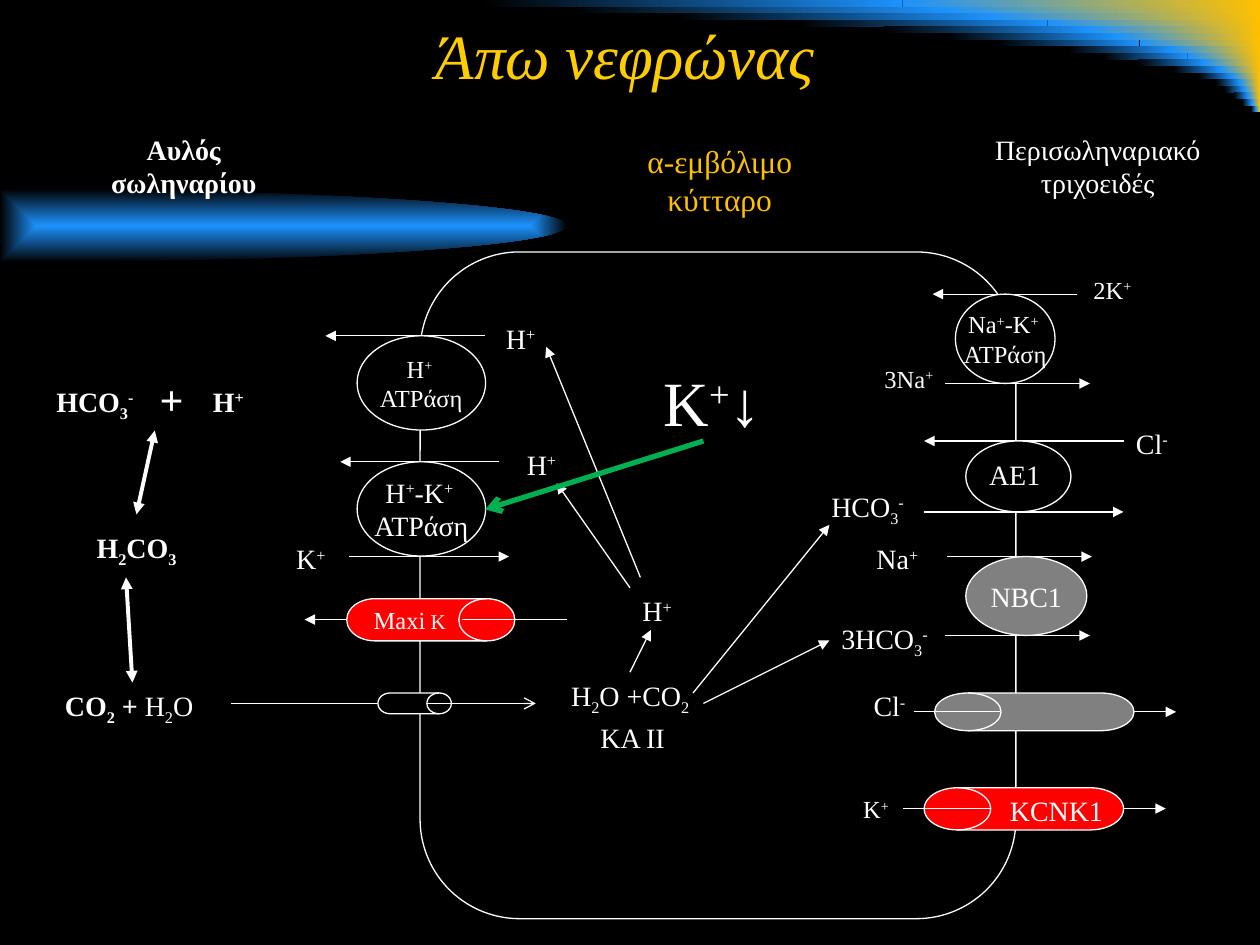
from math import cos, pi, sin
from lxml.etree import SubElement
from pptx import Presentation
from pptx.dml.color import RGBColor
from pptx.enum.shapes import MSO_CONNECTOR, MSO_SHAPE
from pptx.enum.text import MSO_ANCHOR, MSO_AUTO_SIZE, PP_ALIGN
from pptx.oxml.ns import qn
from pptx.util import Cm, Pt

WHITE = RGBColor(0xFF, 0xFF, 0xFF)
BLACK = RGBColor(0, 0, 0)
BLUE = RGBColor(0x1D, 0x92, 0xFD)
AMBER = RGBColor(0xFF, 0xC0, 0)
GOLD = RGBColor(0xFF, 0xCC, 0)
RED = RGBColor(0xFF, 0, 0)
GREY = RGBColor(0x80, 0x80, 0x80)
GREEN = RGBColor(0, 0xB0, 0x50)
LEFT, MID, RIGHT = PP_ALIGN.LEFT, PP_ALIGN.CENTER, PP_ALIGN.RIGHT


def write(frame, text, size=16, color=WHITE, bold=False, italic=False,
          align=LEFT, wrap=False):
    """Fill a frame; | parts runs, ^ raises, _ lowers, ~ ends bold."""
    frame.word_wrap = wrap
    for i, row in enumerate(text.split("\n")):
        para = frame.paragraphs[0] if i == 0 else frame.add_paragraph()
        para.alignment = align
        for part in row.split("|"):
            if part.startswith("~"):
                bold, part = False, part[1:]
            run = para.add_run()
            run.text = part.lstrip("^_")
            font = run.font
            font.name, font.size = "Times New Roman", Pt(size)
            font.bold, font.italic = bold, italic
            font.color.rgb = color
            if part[0] in "^_":
                shift = "30000" if part[0] == "^" else "-25000"
                run._r.get_or_add_rPr().set("baseline", shift)


def link(x1, y1, x2, y2, head=None, tail="triangle", color=WHITE, width=0.75):
    """Draw a line with arrowheads at its start (head) and end (tail)."""
    line = slide.shapes.add_connector(
        MSO_CONNECTOR.STRAIGHT, Cm(x1), Cm(y1), Cm(x2), Cm(y2))
    line.line.color.rgb = color
    line.line.width = Pt(width)
    ln = line.line._get_or_add_ln()
    for tag, kind in (("a:headEnd", head), ("a:tailEnd", tail)):
        if kind:
            SubElement(ln, qn(tag)).set("type", kind)
    SubElement(line._element.spPr, qn("a:effectLst"))


deck = Presentation()
deck.slide_width, deck.slide_height = Cm(25.4), Cm(19.05)
slide = deck.slides.add_slide(deck.slide_layouts[5])
slide.background.fill.solid()
slide.background.fill.fore_color.rgb = BLACK
shapes = slide.shapes

# Corner rays: each row fades black to blue, then blue to amber
starts = [9.73, 11.51, 13.61, 16.08, 17.83, 19.08, 20.12, 21.54, 22.22,
          22.94, 23.65, 24.16, 24.51, 24.69, 24.87, 25.04, 25.22]
for row, start in enumerate(starts):
    turn = start + 0.54 * (25.4 - start)
    for x, end, tones in ((turn, 25.4, (BLUE, AMBER)),
                          (start, turn, (BLACK, BLUE))):
        ray = shapes.add_shape(MSO_SHAPE.RECTANGLE, Cm(x), Cm(row * 0.133),
                               Cm(end - x), Cm(0.14))
        ray.shadow.inherit = False
        ray.line.fill.background()
        ray.fill.gradient()
        ray.fill.gradient_angle = 0
        for stop, tone in zip(ray.fill.gradient_stops, tones):
            stop.color.rgb = tone

# Half-ellipse beam on the left
steps = 48
arc = [(Cm(11.43 * cos(a)), Cm(4.55 + 0.74 * sin(a)))
       for a in (pi * (i / steps - 0.5) for i in range(steps + 1))]
form = shapes.build_freeform(*arc[0])
form.add_line_segments(arc[1:])
beam = form.convert_to_shape()
beam.shadow.inherit = False
beam.line.fill.background()
beam.fill.gradient()
for stop, tone in zip(beam.fill.gradient_stops, (BLUE, BLACK)):
    stop.color.rgb = tone
grad = beam._element.spPr.find(qn("a:gradFill"))
grad.remove(grad.find(qn("a:lin")))
way = SubElement(grad, qn("a:path"))
way.set("path", "shape")
rect = SubElement(way, qn("a:fillToRect"))
for side in "ltrb":
    rect.set(side, "50000")

title = shapes.title
title.left, title.top = Cm(0.85), Cm(0.2)
title.width, title.height = Cm(23.5), Cm(1.8)
title.text_frame.vertical_anchor = MSO_ANCHOR.MIDDLE
write(title.text_frame, "Άπω νεφρώνας", size=36, color=GOLD, italic=True,
      align=MID, wrap=True)

cell = shapes.add_shape(MSO_SHAPE.ROUNDED_RECTANGLE, Cm(8.47), Cm(5.08),
                        Cm(12.01), Cm(13.44))
cell.adjustments[0] = 0.167
cell.shadow.inherit = False
cell.fill.background()
cell.line.color.rgb = WHITE
cell.line.width = Pt(0.75)

# Ion flows across the membranes: height, start, end
flows = [
    (5.93, 21.72, 18.8), (7.73, 19.05, 21.97), (8.89, 22.65, 18.63),
    (10.32, 18.63, 22.65), (11.22, 19.1, 22.01), (12.81, 19.05, 21.97),
    (14.35, 18.42, 23.71), (16.3, 18.2, 23.5), (6.77, 9.78, 6.56),
    (9.31, 10.06, 6.86), (11.22, 7.04, 10.26), (12.49, 11.43, 6.14),
]
for y, x1, x2 in flows:
    link(x1, y, x2, y)
link(4.66, 14.18, 10.8, 14.18, tail="arrow")

# Reactions inside the cell
for ends in [(13.97, 13.97, 16.72, 10.58), (12.7, 11.85, 11.22, 9.74),
             (12.91, 11.64, 11.01, 6.99), (12.7, 13.55, 13.12, 12.7),
             (14.18, 14.18, 16.72, 12.91)]:
    link(*ends)
for ends in [(3.12, 8.68, 2.75, 10.37), (2.54, 11.64, 2.67, 13.76)]:
    link(*ends, head="triangle", width=2.25)

# Pumps and channels
OVAL, DRUM = MSO_SHAPE.OVAL, MSO_SHAPE.FLOWCHART_DIRECT_ACCESS_STORAGE
parts = [
    (OVAL, 19.26, 5.93, 2.01, 1.8, BLACK, 0, "Na|^+|-K|^+ \nATPάση", 14),
    (OVAL, 19.47, 8.89, 2.12, 1.43, BLACK, 0, "", 16),
    (OVAL, 19.47, 11.22, 2.44, 1.59, GREY, 0, "NBC1", 16),
    (OVAL, 7.2, 6.77, 2.59, 1.9, BLACK, 0, "Η|^+ \nATPάση", 14),
    (OVAL, 7.2, 9.31, 2.59, 1.9, BLACK, 0, "Η|^+|-K|^+ \nATPάση", 16),
    (DRUM, 6.99, 12.07, 3.39, 0.85, RED, 0, "", 16),
    (DRUM, 7.62, 13.97, 1.48, 0.42, BLACK, 0, "", 16),
    (DRUM, 18.84, 13.97, 4.02, 0.76, GREY, 180, "", 16),
    (DRUM, 18.63, 15.88, 4.02, 0.85, RED, 180, "", 16),
]
for kind, x, y, w, h, tone, turn, text, size in parts:
    part = shapes.add_shape(kind, Cm(x), Cm(y), Cm(w), Cm(h))
    part.shadow.inherit = False
    part.rotation = turn
    part.fill.solid()
    part.fill.fore_color.rgb = tone
    part.line.color.rgb = WHITE
    part.line.width = Pt(0.75)
    if text:
        part.text_frame.vertical_anchor = MSO_ANCHOR.MIDDLE
        write(part.text_frame, text, size=size, align=MID)

# Flow seen through each channel mouth
for y, x1, x2 in [(12.49, 9.31, 10.44), (14.18, 8.61, 9.1),
                  (14.35, 18.84, 20.16), (16.3, 18.63, 19.96)]:
    link(x1, y, x2, y, tail=None)

head = dict(align=MID, wrap=True)
bold = dict(bold=True)
small = dict(size=14)
wide = dict(wrap=True)
labels = [
    ("Αυλός σωληναρίου", 1.7, 2.54, 4.01, 1.63, head | bold),
    ("α-εμβόλιμο κύτταρο", 12.07, 2.74, 4.88, 1.8,
     head | dict(size=18, color=AMBER)),
    ("Περισωληναριακό τριχοειδές", 19.69, 2.54, 4.88, 1.63, head),
    ("2K|^+", 21.79, 5.41, 1.32, 1.04, small),
    ("3Na|^+", 17.58, 7.21, 1.52, 1.04, small),
    ("Cl|^-", 22.65, 8.47, 1.17, 0.93, {}),
    ("ΑΕ1", 19.69, 9.1, 1.9, 0.93, wide),
    ("HCO|_3|^-", 16.51, 9.74, 2.03, 1.14, {}),
    ("Na|^+", 17.42, 10.8, 1.4, 0.93, {}),
    ("3HCO|_3|^-", 16.71, 12.4, 2.31, 0.93, {}),
    ("Cl|^-", 17.36, 13.76, 1.17, 0.93, {}),
    ("K|^+", 17.15, 15.88, 1.07, 1.04, small),
    ("KCNK1", 20.11, 15.88, 2.41, 0.93, wide),
    ("Η|^+", 9.95, 6.35, 1.37, 0.93, wide),
    ("Η|^+", 10.37, 8.89, 1.37, 0.93, wide),
    ("Κ|^+", 5.72, 10.8, 1.37, 0.93, wide),
    ("Maxi", 7.2, 12.07, 2.12, 0.85, head | small),
    ("Η|^+", 12.7, 11.85, 1.17, 0.93, {}),
    ("H|_2|O +CO|_2", 11.22, 13.55, 2.97, 0.93, head),
    ("ΚA II", 11.84, 14.4, 1.83, 0.93, dict(align=MID)),
    ("Κ|^+|↓", 13.13, 7.2, 2.97, 1.8, wide | dict(size=36)),
    ("HCO|_3|^-", 0.85, 7.62, 2.13, 0.93, bold | dict(align=MID)),
    ("+", 2.96, 7.41, 0.99, 1.27, bold | dict(size=24, align=RIGHT)),
    ("Η|^+", 4.02, 7.62, 1.17, 0.93, bold | dict(align=MID)),
    ("H|_2|CO|_3", 1.7, 10.58, 2.18, 0.93, bold),
    ("CO|_2| + |~H|_2|O", 1.06, 13.76, 3.15, 0.93, bold),
]
for text, x, y, w, h, form in labels:
    box = shapes.add_textbox(Cm(x), Cm(y), Cm(w), Cm(h))
    box.text_frame.auto_size = MSO_AUTO_SIZE.SHAPE_TO_FIT_TEXT
    write(box.text_frame, text, **form)
    if text == "Maxi":
        run = box.text_frame.paragraphs[0].add_run()
        run.text = " K"
        run.font.name, run.font.size = "Times New Roman", Pt(12)
        run.font.color.rgb = WHITE

link(14.18, 8.89, 9.78, 10.27, tail="arrow", color=GREEN, width=3)
deck.save("out.pptx")
